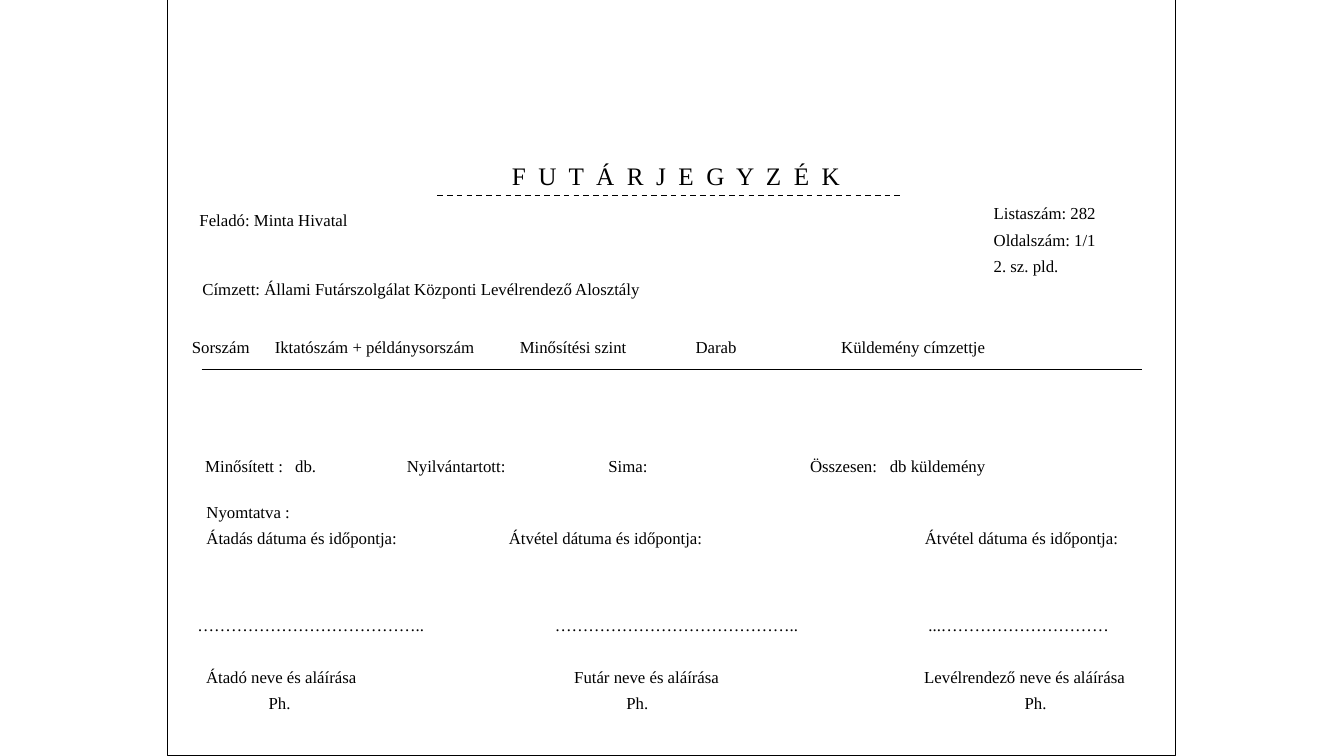
from pptx import Presentation
from pptx.dml.color import RGBColor
from pptx.enum.dml import MSO_LINE_DASH_STYLE as DASH
from pptx.enum.shapes import MSO_CONNECTOR, MSO_SHAPE
from pptx.enum.text import MSO_ANCHOR, MSO_AUTO_SIZE, PP_ALIGN
from pptx.oxml.ns import qn
from pptx.util import Pt
from lxml.etree import SubElement

BLACK = RGBColor(0, 0, 0)
WHITE = RGBColor(255, 255, 255)
FONT = "Times New Roman"
INSET = 7.2

presentation = Presentation()
presentation.slide_width = Pt(960)
presentation.slide_height = Pt(540)
slide = presentation.slides.add_slide(presentation.slide_layouts[5])


def write_lines(shape, left, top, width, height, lines, size=12, spacing=1.3):
    shape.left, shape.top, shape.width, shape.height = map(Pt, (left, top, width, height))
    frame = shape.text_frame
    frame.word_wrap = True
    frame.auto_size = MSO_AUTO_SIZE.NONE
    frame.vertical_anchor = MSO_ANCHOR.MIDDLE
    frame.text = "\n".join(text for text, stops in lines)
    for paragraph, (text, stops) in zip(frame.paragraphs, lines):
        paragraph.line_spacing = spacing
        if stops:
            tab_list = SubElement(paragraph._p.get_or_add_pPr(), qn("a:tabLst"))
            for stop in stops:
                SubElement(tab_list, qn("a:tab"), pos=str(Pt(stop - left - INSET)), algn="l")
        for run in paragraph.runs:
            run.font.name = FONT
            run.font.size = Pt(size)
            run.font.color.rgb = BLACK
    return frame.paragraphs


def add_rule(left, right, y, weight):
    rule = slide.shapes.add_connector(MSO_CONNECTOR.STRAIGHT, Pt(left), Pt(y), Pt(right), Pt(y))
    rule.line.color.rgb = BLACK
    rule.line.width = Pt(weight)
    SubElement(rule._element.spPr, qn("a:effectLst"))
    return rule


page = slide.shapes.add_shape(MSO_SHAPE.RECTANGLE, Pt(120), Pt(0), Pt(720), Pt(540))
page.shadow.inherit = False
page.fill.solid()
page.fill.fore_color.rgb = WHITE
page.line.color.rgb = BLACK
page.line.width = Pt(0.75)
page._element.getparent().insert(2, page._element)

heading = write_lines(slide.shapes.title, 352, 115, 262, 24.5,
                      [("F U T Á R J E G Y Z É K", None)], 18, 0.8)[0]
heading.alignment = PP_ALIGN.CENTER
heading.runs[0].font._element.set("spc", "225")

add_rule(312.5, 645, 139.5, 1).line.dash_style = DASH.DASH
add_rule(144, 816, 264.25, 0.75)

sections = [
    (135.4, 149, 400, 18.7, 0.8, [("Feladó: Minta Hivatal", None)]),
    (702.7, 136.8, 100, 64, 1.3,
     [("Listaszám: 282", None), ("Oldalszám: 1/1", None), ("2. sz. pld.", None)]),
    (137.5, 190.8, 340, 26, 1.3,
     [("Címzett: Állami Futárszolgálat Központi Levélrendező Alosztály", None)]),
    (130, 232.6, 600, 26, 1.3,
     [("Sorszám\tIktatószám + példánysorszám\tMinősítési szint\tDarab\tKüldemény címzettje",
       (196.4, 371.4, 497, 601))]),
    (139.5, 317.5, 650, 26, 1.3,
     [("Minősített :\tdb.\tNyilvántartott:\tSima:\tÖsszesen:\tdb küldemény",
       (211, 290.7, 434.7, 578.7, 635.7))]),
    (140.4, 350, 680, 45, 1.3,
     [("Nyomtatva :", None),
      ("Átadás dátuma és időpontja:\tÁtvétel dátuma és időpontja:\tÁtvétel dátuma és időpontja:",
       (363.6, 660.7))]),
    (134, 430.6, 704, 83, 1.3,
     [("…………………………………..\t……………………………………..\t...…………………………", (396.4, 663.3)),
      ("\tÁtadó neve és aláírása\tFutár neve és aláírása\tLevélrendező neve és aláírása",
       (147.3, 410.3, 660.3)),
      ("\tPh.\tPh.\tPh.", (192, 447.5, 732))]),
]
for left, top, width, height, spacing, lines in sections:
    box = slide.shapes.add_textbox(Pt(left), Pt(top), Pt(width), Pt(height))
    signature_lines = write_lines(box, left, top, width, height, lines, spacing=spacing)
signature_lines[1].space_before = Pt(18.6)

presentation.save("out.pptx")
